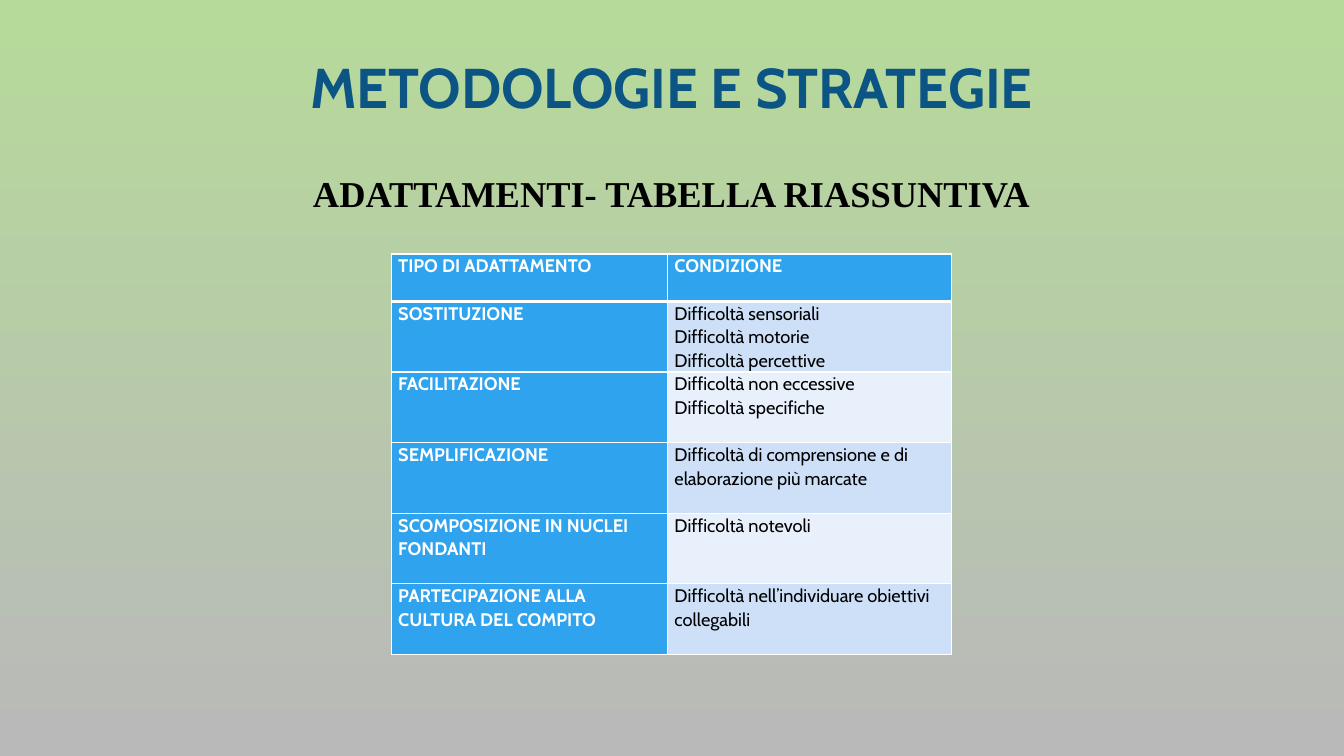
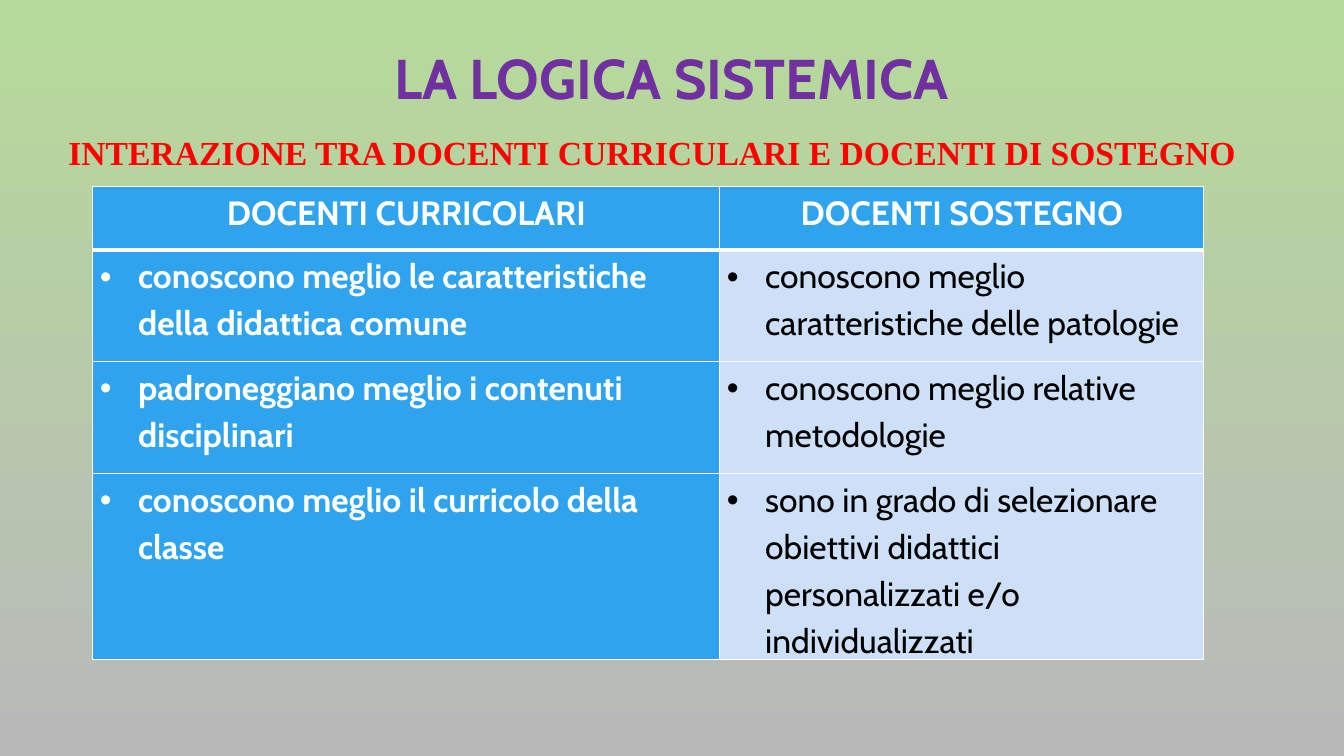
from lxml import etree
from pptx import Presentation
from pptx.dml.color import RGBColor
from pptx.enum.text import MSO_ANCHOR, PP_ALIGN
from pptx.oxml.ns import qn
from pptx.util import Inches, Pt

CENTER, LEFT = PP_ALIGN.CENTER, PP_ALIGN.LEFT
BOTTOM = MSO_ANCHOR.BOTTOM

GREEN = RGBColor(0xB6, 0xDA, 0x9A)
GRAY = RGBColor(0xB9, 0xB9, 0xB9)
NAVY = RGBColor(0x0B, 0x54, 0x84)
PURPLE = RGBColor(0x70, 0x30, 0xA0)
RED = RGBColor(0xFF, 0x00, 0x00)
BLACK = RGBColor(0x00, 0x00, 0x00)
WHITE = RGBColor(0xFF, 0xFF, 0xFF)
BLUE = RGBColor(0x2F, 0xA3, 0xEE)
PALE_BLUE = RGBColor(0xCD, 0xE0, 0xF8)
PALEST_BLUE = RGBColor(0xE8, 0xF0, 0xFC)

SANS, SERIF = "Cabin", "Times New Roman"


def write(paragraph, text, size, font, color, bold=True, align=LEFT, spacing=1.0):
    paragraph.alignment = align
    paragraph.line_spacing = spacing
    paragraph.space_before = Pt(0)
    run = paragraph.add_run()
    run.text = text
    run.font.size = Pt(size)
    run.font.name = font
    run.font.bold = bold
    run.font.color.rgb = color


def add_grid(slide, left, top, widths, heights, rows, size, spacing,
             body_fills, header_align=LEFT, bullets=False):
    table = slide.shapes.add_table(
        len(rows), len(widths), Inches(left), Inches(top),
        Inches(sum(widths)), Inches(sum(heights))).table
    for column, width in zip(table.columns, widths):
        column.width = Inches(width)
    for r, (height, row) in enumerate(zip(heights, rows)):
        table.rows[r].height = Inches(height)
        for c, text in enumerate(row):
            cell = table.cell(r, c)
            cell.margin_left = cell.margin_right = Inches(0.07)
            cell.margin_top = cell.margin_bottom = 0
            strong = r == 0 or c == 0
            for side in ("lnL", "lnR", "lnT", "lnB"):
                thick = (r, side) in ((0, "lnB"), (1, "lnT"))
                border = etree.SubElement(cell._tc.get_or_add_tcPr(), qn(f"a:{side}"),
                                          w=str(Pt(3 if thick else 1)))
                solid = etree.SubElement(border, qn("a:solidFill"))
                etree.SubElement(solid, qn("a:srgbClr"), val=str(WHITE))
            cell.fill.solid()
            cell.fill.fore_color.rgb = BLUE if strong else body_fills[(r - 1) % len(body_fills)]
            for i, line in enumerate(text.split("\n")):
                frame = cell.text_frame
                paragraph = frame.add_paragraph() if i else frame.paragraphs[0]
                if bullets and r:
                    props = paragraph._p.get_or_add_pPr()
                    props.set("marL", str(Inches(0.38)))
                    props.set("indent", str(-Inches(0.38)))
                    etree.SubElement(props, qn("a:buFont"), typeface="Arial")
                    etree.SubElement(props, qn("a:buChar"), char="•")
                write(paragraph, line, size, SANS, WHITE if strong else BLACK, strong,
                      LEFT if r else header_align, spacing)


prs = Presentation()
prs.slide_width, prs.slide_height = Inches(13.33), Inches(7.5)

backdrop = prs.slide_master.background.fill
backdrop.gradient()
backdrop.gradient_angle = 270
for stop, color, position in zip(backdrop.gradient_stops, (GREEN, GRAY), (0, 1)):
    stop.color.rgb = color
    stop.position = position

slides = []
for layout, heading, color, top in (
        (1, "METODOLOGIE E STRATEGIE", NAVY, 0.26),
        (5, "LA LOGICA SISTEMICA", PURPLE, 0.17)):
    slide = prs.slides.add_slide(prs.slide_layouts[layout])
    title = slide.shapes.title
    title.left, title.top = Inches(1), Inches(top)
    title.width, title.height = Inches(11.32), Inches(0.99)
    title.text_frame.vertical_anchor = BOTTOM
    write(title.text_frame.paragraphs[0], heading, 40, SANS, color,
          align=CENTER, spacing=0.9)
    slides.append(slide)
strategies, systemic = slides

subtitle = strategies.placeholders[1]
subtitle.left, subtitle.top = Inches(0.4), Inches(1.56)
subtitle.width, subtitle.height = Inches(12.53), Inches(4.11)
subtitle_line = subtitle.text_frame.paragraphs[0]
subtitle_props = subtitle_line._p.get_or_add_pPr()
subtitle_props.set("marL", "0")
subtitle_props.set("indent", "0")
etree.SubElement(subtitle_props, qn("a:buNone"))
write(subtitle_line, "ADATTAMENTI- TABELLA RIASSUNTIVA", 26, SERIF, BLACK,
      align=CENTER, spacing=1.2)

adaptations = [
    ("TIPO DI ADATTAMENTO", "CONDIZIONE"),
    ("SOSTITUZIONE", "Difficoltà sensoriali\nDifficoltà motorie\nDifficoltà percettive"),
    ("FACILITAZIONE", "Difficoltà non eccessive\nDifficoltà specifiche"),
    ("SEMPLIFICAZIONE", "Difficoltà di comprensione e di\nelaborazione più marcate"),
    ("SCOMPOSIZIONE IN NUCLEI\nFONDANTI", "Difficoltà notevoli"),
    ("PARTECIPAZIONE ALLA\nCULTURA DEL COMPITO",
     "Difficoltà nell’individuare obiettivi\ncollegabili"),
]
add_grid(strategies, 3.88, 2.52, [2.74, 2.82], [0.47] + [0.7] * 5, adaptations,
         13, 1.07, [PALE_BLUE, PALEST_BLUE])

interaction = systemic.shapes.add_textbox(
    Inches(0.58), Inches(1.26), Inches(11.87), Inches(0.5)).text_frame
interaction.word_wrap = True
write(interaction.paragraphs[0],
      "INTERAZIONE TRA DOCENTI CURRICULARI E DOCENTI DI SOSTEGNO", 24, SERIF, RED)

teachers = [
    ("DOCENTI CURRICOLARI", "DOCENTI SOSTEGNO"),
    ("conoscono meglio le caratteristiche della didattica comune",
     "conoscono meglio caratteristiche delle patologie"),
    ("padroneggiano meglio i contenuti disciplinari",
     "conoscono meglio relative metodologie"),
    ("conoscono meglio il curricolo della classe",
     "sono in grado di selezionare obiettivi didattici personalizzati e/o individualizzati"),
]
add_grid(systemic, 0.92, 1.85, [6.22, 4.8], [0.63, 1.11, 1.11, 1.83], teachers,
         24, 1.15, [PALE_BLUE], CENTER, bullets=True)

prs.save("out.pptx")
